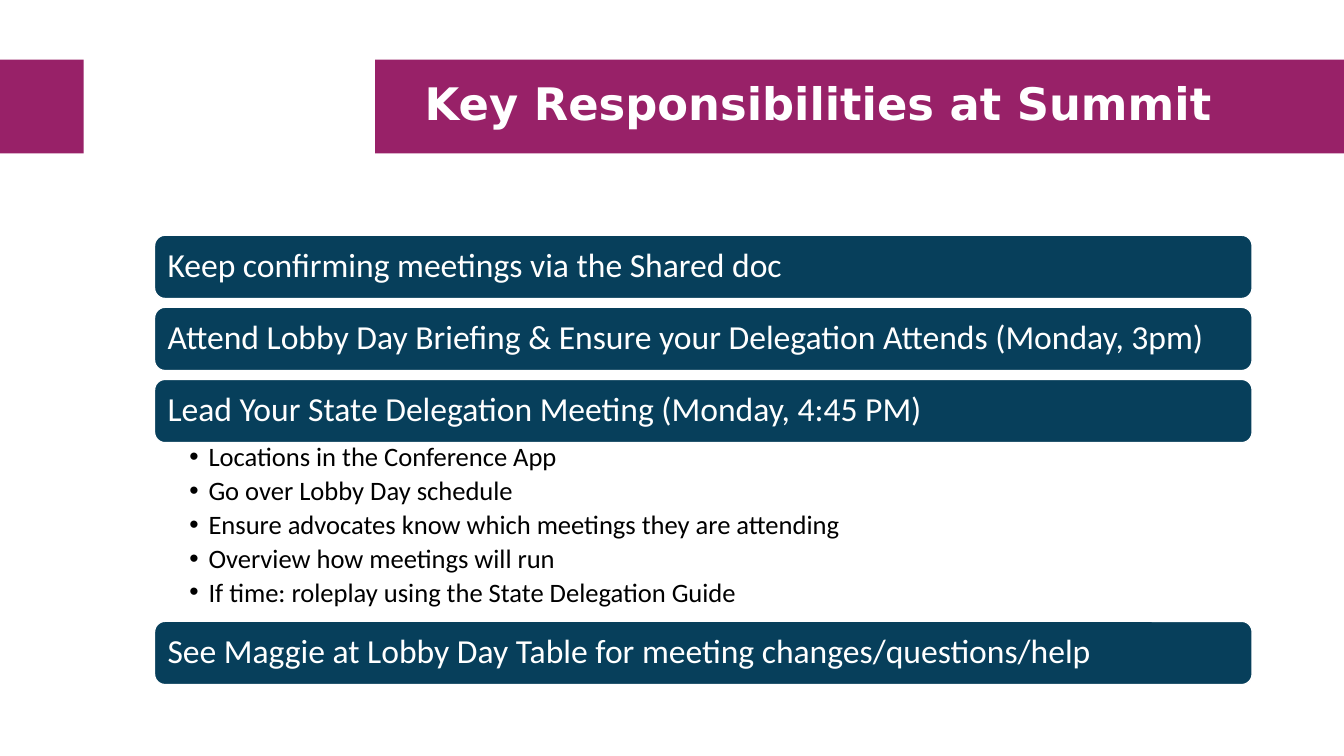
from lxml import etree
from pptx import Presentation
from pptx.dml.color import RGBColor
from pptx.enum.shapes import MSO_SHAPE
from pptx.enum.text import MSO_ANCHOR, PP_ALIGN
from pptx.oxml.ns import qn
from pptx.util import Pt

TITLE = "Key Responsibilities at Summit"
RESPONSIBILITIES = [
    ("Keep confirming meetings via the Shared doc", []),
    ("Attend Lobby Day Briefing & Ensure your Delegation Attends (Monday, 3pm)", []),
    ("Lead Your State Delegation Meeting (Monday, 4:45 PM)", [
        "Locations in the Conference App",
        "Go over Lobby Day schedule",
        "Ensure advocates know which meetings they are attending",
        "Overview how meetings will run",
        "If time: roleplay using the State Delegation Guide",
    ]),
    ("See Maggie at Lobby Day Table for meeting changes/questions/help", []),
]

PLUM = RGBColor(0x98, 0x21, 0x68)
NAVY = RGBColor(0x07, 0x3F, 0x5B)
WHITE = RGBColor(0xFF, 0xFF, 0xFF)
BLACK = RGBColor(0, 0, 0)
RECTANGLE, ROUNDED = MSO_SHAPE.RECTANGLE, MSO_SHAPE.ROUNDED_RECTANGLE
LEFT, CENTER = PP_ALIGN.LEFT, PP_ALIGN.CENTER
TOP, MIDDLE = MSO_ANCHOR.TOP, MSO_ANCHOR.MIDDLE

SLIDE_WIDTH, SLIDE_HEIGHT = 960, 540
BAND_TOP, BAND_HEIGHT = 42.6, 67
BANDS = [(268, SLIDE_WIDTH - 268), (0, 59.8)]
BAR_LEFT, BAR_WIDTH, BAR_HEIGHT = 110.4, 784, 45.2
FIRST_BAR_TOP, BAR_GAP = 168, 6.3
LIST_OVERLAP, LIST_HEIGHT = 1.3, 128.9
BULLET_INDENT = 13.7

TITLE_FONT = {"name": "DejaVu Sans", "size": Pt(32), "bold": True}
BAR_FONT = {"name": "Calibri", "size": Pt(24)}
LIST_FONT = {"name": "Calibri", "size": Pt(19)}


def add_block(slide, kind, left, top, width, height, fill):
    shape = slide.shapes.add_shape(kind, Pt(left), Pt(top), Pt(width), Pt(height))
    shape.shadow.inherit = False
    shape.fill.solid()
    shape.fill.fore_color.rgb = fill
    shape.line.fill.background()
    return shape


def add_bullet(paragraph):
    properties = paragraph._p.get_or_add_pPr()
    properties.set("marL", str(Pt(BULLET_INDENT)))
    properties.set("indent", str(-Pt(BULLET_INDENT)))
    etree.SubElement(properties, qn("a:buFont")).set("typeface", "Arial")
    etree.SubElement(properties, qn("a:buChar")).set("char", "•")


def write(shape, lines, font, color, align=LEFT, anchor=MIDDLE,
          margins=(7.2, 7.2, 7.2, 7.2), bullets=False, space_after=0):
    frame = shape.text_frame
    frame.word_wrap = True
    frame.vertical_anchor = anchor
    for side, margin in zip(("left", "top", "right", "bottom"), margins):
        setattr(frame, f"margin_{side}", Pt(margin))
    for index, line in enumerate(lines):
        paragraph = frame.paragraphs[0] if index == 0 else frame.add_paragraph()
        paragraph.text = line
        if bullets:
            add_bullet(paragraph)
        settings = {"alignment": align, "line_spacing": 0.9,
                    "space_before": Pt(0), "space_after": Pt(space_after)}
        for name, value in settings.items():
            setattr(paragraph, name, value)
        for name, value in font.items():
            setattr(paragraph.font, name, value)
        paragraph.font.color.rgb = color


def add_title(slide):
    for left, width in BANDS:
        add_block(slide, RECTANGLE, left, BAND_TOP, width, BAND_HEIGHT, PLUM)
    title = slide.shapes.title
    box = {"left": 282.2, "top": 49, "width": 604.8, "height": 54}
    for name, value in box.items():
        setattr(title, name, Pt(value))
    write(title, [TITLE], TITLE_FONT, WHITE, CENTER, margins=(7.2, 3.6, 7.2, 3.6))
    slide.shapes._spTree.append(title._element)


def add_responsibilities(slide):
    top = FIRST_BAR_TOP
    for heading, details in RESPONSIBILITIES:
        bar = add_block(slide, ROUNDED, BAR_LEFT, top, BAR_WIDTH, BAR_HEIGHT, NAVY)
        bar.line.color.rgb = WHITE
        bar.line.width = Pt(1)
        write(bar, [heading], BAR_FONT, WHITE)
        top += BAR_HEIGHT
        if details:
            top -= LIST_OVERLAP
            box = slide.shapes.add_textbox(
                Pt(BAR_LEFT), Pt(top), Pt(BAR_WIDTH), Pt(LIST_HEIGHT))
            write(box, details, LIST_FONT, BLACK, anchor=TOP,
                  margins=(24.9, 2.2, 13.7, 2.2), bullets=True, space_after=3.6)
            top += LIST_HEIGHT
        else:
            top += BAR_GAP


def main():
    presentation = Presentation()
    presentation.slide_width = Pt(SLIDE_WIDTH)
    presentation.slide_height = Pt(SLIDE_HEIGHT)
    slide = presentation.slides.add_slide(presentation.slide_layouts[5])
    add_title(slide)
    add_responsibilities(slide)
    presentation.save("out.pptx")


if __name__ == "__main__":
    main()
